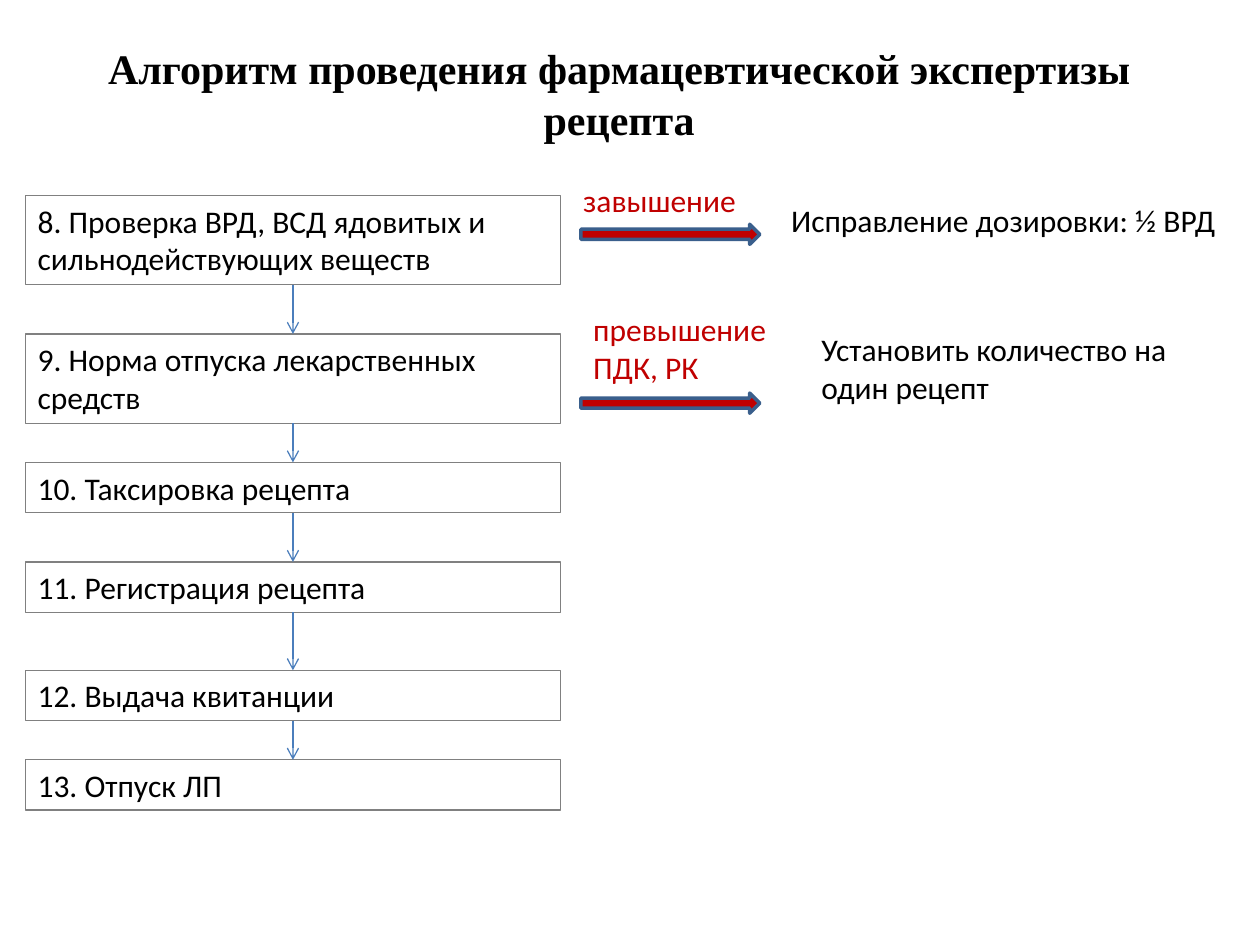
"""Build the slide with the steps of a prescription check."""
from dataclasses import dataclass
from itertools import pairwise

import pptx
import pptx.dml.color
import pptx.enum.shapes
import pptx.enum.text
import pptx.oxml
import pptx.oxml.ns
import pptx.presentation
import pptx.shapes.autoshape
import pptx.shapes.connector
import pptx.slide
import pptx.util

Inches = pptx.util.Inches
Pt = pptx.util.Pt
Color = pptx.dml.color.RGBColor
Kind = pptx.enum.shapes.MSO_SHAPE
Align = pptx.enum.text.PP_ALIGN


@dataclass(frozen=True)
class Theme:
    ink: Color = Color(0x00, 0x00, 0x00)
    alert: Color = Color(0xC0, 0x00, 0x00)
    frame: Color = Color(0x80, 0x80, 0x80)
    link: Color = Color(0x4B, 0x7E, 0xBC)
    edge: Color = Color(0x3A, 0x5F, 0x8C)
    body: str = "Calibri"
    head: str = "Times New Roman"
    body_size: Pt = Pt(18)
    head_size: Pt = Pt(24)
    thin: Pt = Pt(0.75)
    thick: Pt = Pt(2)


@dataclass(frozen=True)
class Step:
    text: str
    top: float
    lines: int = 1


@dataclass(frozen=True)
class Note:
    text: str
    left: float
    top: float
    width: float
    lines: int = 1
    color: Color = Theme.ink
    font: str = Theme.body
    size: Pt = Theme.body_size
    bold: bool = False
    align: Align = Align.LEFT


HEIGHTS = {1: 0.4, 2: 0.71}
STEPS = [
    Step("8. Проверка ВРД, ВСД ядовитых и сильнодействующих веществ", 1.55, 2),
    Step("9. Норма отпуска лекарственных средств", 2.65, 2),
    Step("10. Таксировка рецепта", 3.67),
    Step("11. Регистрация рецепта", 4.46),
    Step("12. Выдача квитанции", 5.32),
    Step("13. Отпуск ЛП", 6.03),
]
TITLE = Note("Алгоритм проведения фармацевтической экспертизы рецепта",
             0.35, 0.29, 9.13, 2, font=Theme.head, size=Theme.head_size,
             bold=True, align=Align.CENTER)
NOTES = [
    TITLE,
    Note("завышение", 4.53, 1.39, 1.42, color=Theme.alert),
    Note("Исправление дозировки: ½ ВРД", 6.18, 1.55, 3.62),
    Note("превышение\nПДК, РК", 4.61, 2.41, 1.97, 2, color=Theme.alert),
    Note("Установить количество на один рецепт", 6.42, 2.57, 2.99, 2),
]
ARROW_TOPS = [1.78, 3.12]


def write(shape: pptx.shapes.autoshape.Shape, note: Note) -> None:
    """Put the words of a note into a shape."""
    frame = shape.text_frame
    frame.word_wrap = True
    frame.vertical_anchor = pptx.enum.text.MSO_ANCHOR.TOP
    frame.text = note.text
    for para in frame.paragraphs:
        para.alignment = note.align
        para.font.name = note.font
        para.font.size = note.size
        para.font.bold = note.bold
        para.font.color.rgb = note.color


def add_note(slide: pptx.slide.Slide, note: Note) -> None:
    """Add a plain text box."""
    height = 0.91 if note is TITLE else HEIGHTS[note.lines]
    box = slide.shapes.add_textbox(Inches(note.left), Inches(note.top),
                                   Inches(note.width), Inches(height))
    write(box, note)


def add_step(slide: pptx.slide.Slide, step: Step) -> pptx.shapes.autoshape.Shape:
    """Add a framed step of the chain."""
    left, width = 0.2, 4.25
    box = slide.shapes.add_shape(Kind.RECTANGLE, Inches(left), Inches(step.top),
                                 Inches(width), Inches(HEIGHTS[step.lines]))
    box.shadow.inherit = False
    box.fill.background()
    box.line.color.rgb = Theme.frame
    box.line.width = Theme.thin
    write(box, Note(step.text, left, step.top, width, step.lines))
    return box


def add_link(slide: pptx.slide.Slide, upper: pptx.shapes.autoshape.Shape,
             lower: pptx.shapes.autoshape.Shape) -> None:
    """Join two steps with a thin arrow."""
    link: pptx.shapes.connector.Connector = slide.shapes.add_connector(
        pptx.enum.shapes.MSO_CONNECTOR.STRAIGHT, 0, 0, 0, 0)
    link.begin_connect(upper, 2)
    link.end_connect(lower, 0)
    link.line.color.rgb = Theme.link
    link.line.width = Theme.thin
    space = pptx.oxml.ns.nsdecls("a")
    link.line._get_or_add_ln().append(
        pptx.oxml.parse_xml(f'<a:tailEnd {space} type="arrow"/>'))
    link._element.spPr.append(pptx.oxml.parse_xml(f"<a:effectLst {space}/>"))


def add_arrow(slide: pptx.slide.Slide, top: float) -> None:
    """Add a red block arrow beside a step."""
    arrow = slide.shapes.add_shape(Kind.RIGHT_ARROW, Inches(4.61), Inches(top),
                                   Inches(1.42), Inches(0.16))
    arrow.shadow.inherit = False
    arrow.fill.solid()
    arrow.fill.fore_color.rgb = Theme.alert
    arrow.line.color.rgb = Theme.edge
    arrow.line.width = Theme.thick


def main() -> None:
    """Draw the slide and save it."""
    deck: pptx.presentation.Presentation = pptx.Presentation()
    deck.slide_width, deck.slide_height = Inches(10), Inches(7.5)
    slide = deck.slides.add_slide(deck.slide_layouts[6])
    for note in NOTES:
        add_note(slide, note)
    boxes = [add_step(slide, step) for step in STEPS]
    for upper, lower in pairwise(boxes):
        add_link(slide, upper, lower)
    for top in ARROW_TOPS:
        add_arrow(slide, top)
    deck.save("out.pptx")


if __name__ == "__main__":
    main()
